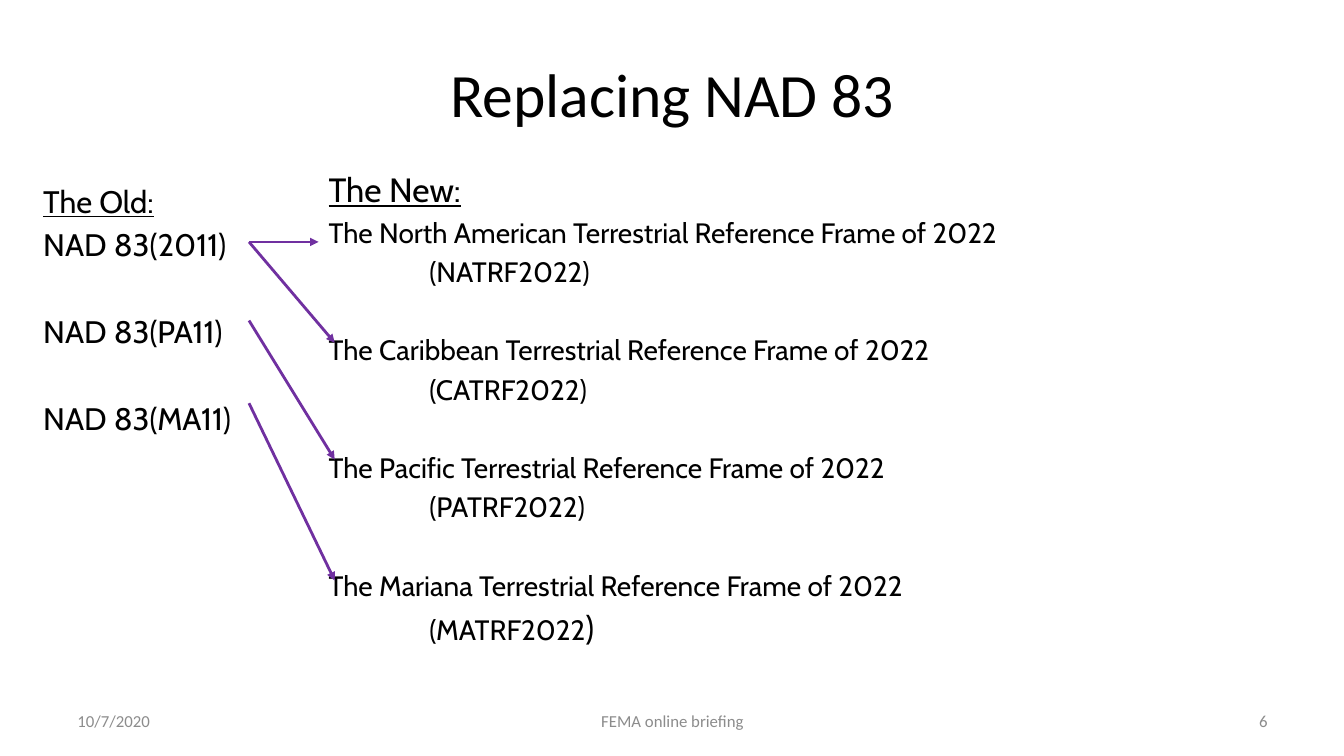
from lxml.etree import SubElement as Sub
from pptx import Presentation
from pptx.dml.color import RGBColor as Rgb
from pptx.enum.shapes import MSO_CONNECTOR as Conn
from pptx.enum.text import MSO_ANCHOR as Anchor, PP_ALIGN as Align
from pptx.oxml.ns import qn
from pptx.util import Pt

PX = 9144
INK = {"text": "000000", "foot": "8C8C8C", "arrow": "7030A0"}
FRAMES = [
    ("North American", "NATRF2022"),
    ("Caribbean", "CATRF2022"),
    ("Pacific", "PATRF2022"),
    ("Mariana", "MATRF2022"),
]
LINKS = [
    ((247, 240), (316, 240)),
    ((247, 240), (332, 340)),
    ((247, 318), (332, 456)),
    ((247, 400), (332, 576)),
]


def add_box(slide, box, anchor=Anchor.TOP):
    """Add a wrapping text box and return its text frame."""
    frame = slide.shapes.add_textbox(*(n * PX for n in box)).text_frame
    frame.word_wrap = True
    frame.vertical_anchor = anchor
    return frame


def add_run(para, text, size, font="Cabin", ink="text", line=False):
    """Add one styled run to a paragraph."""
    run = para.add_run()
    run.text = text
    run.font.name = font
    run.font.size = Pt(size)
    run.font.underline = line
    run.font.color.rgb = Rgb.from_string(INK[ink])


def add_label(slide, box, text, size, align, ink):
    """Place one centred-height line of Calibri text."""
    para = add_box(slide, box, Anchor.MIDDLE).paragraphs[0]
    para.alignment = align
    add_run(para, text, size, "Calibri", ink)


def add_old(slide, box):
    """List the old frames under their heading."""
    frame = add_box(slide, box)
    add_run(frame.paragraphs[0], "The Old:", 22.2, line=True)
    for i, code in enumerate(("2011", "PA11", "MA11")):
        para = frame.add_paragraph()
        para.space_before = Pt(35.5 if i else 4.4)
        add_run(para, f"NAD 83({code})", 22.2)


def add_new(slide, box):
    """List the new frames with their short names indented below."""
    frame = add_box(slide, box)
    add_run(frame.paragraphs[0], "The New:", 24, line=True)
    for i, (place, code) in enumerate(FRAMES):
        name = frame.add_paragraph()
        name.space_before = Pt(32 if i else 4)
        add_run(name, f"The {place} Terrestrial Reference Frame of 2022", 20)
        short = frame.add_paragraph()
        short.space_before = Pt(4)
        short._p.get_or_add_pPr().set("marL", str(100 * PX))
        add_run(short, f"({code}", 20)
        add_run(short, ")", 24 if i == len(FRAMES) - 1 else 20)


def add_arrow(slide, start, end):
    """Draw one arrow from an old frame to a new one."""
    link = slide.shapes.add_connector(
        Conn.STRAIGHT, *(n * PX for n in start + end))
    link.line.color.rgb = Rgb.from_string(INK["arrow"])
    link.line.width = Pt(2)
    Sub(link.line._get_or_add_ln(), qn("a:tailEnd"), type="triangle")
    Sub(link._element.spPr, qn("a:effectLst"))


def add_foot(slide, x, y, w, h):
    """Place the date, briefing name and page number in the footer strip."""
    parts = [
        (0, 311, "10/7/2020", Align.LEFT),
        (389, 422, "FEMA online briefing", Align.CENTER),
        (w - 311, 311, "6", Align.RIGHT),
    ]
    for left, wide, text, align in parts:
        add_label(slide, (x + left, y, wide, h), text, 12, align, "foot")


def main():
    """Build and save the slide."""
    deck = Presentation()
    deck.slide_width, deck.slide_height = 1333 * PX, 750 * PX
    slide = deck.slides.add_slide(deck.slide_layouts[6])
    add_label(slide, (67, 30, 1200, 125), "Replacing NAD 83", 44,
              Align.CENTER, "text")
    add_old(slide, (33, 176, 299, 258))
    add_new(slide, (316, 163, 692, 525))
    for start, end in LINKS:
        add_arrow(slide, start, end)
    add_foot(slide, 67, 695, 1200, 40)
    deck.save("out.pptx")


if __name__ == "__main__":
    main()
